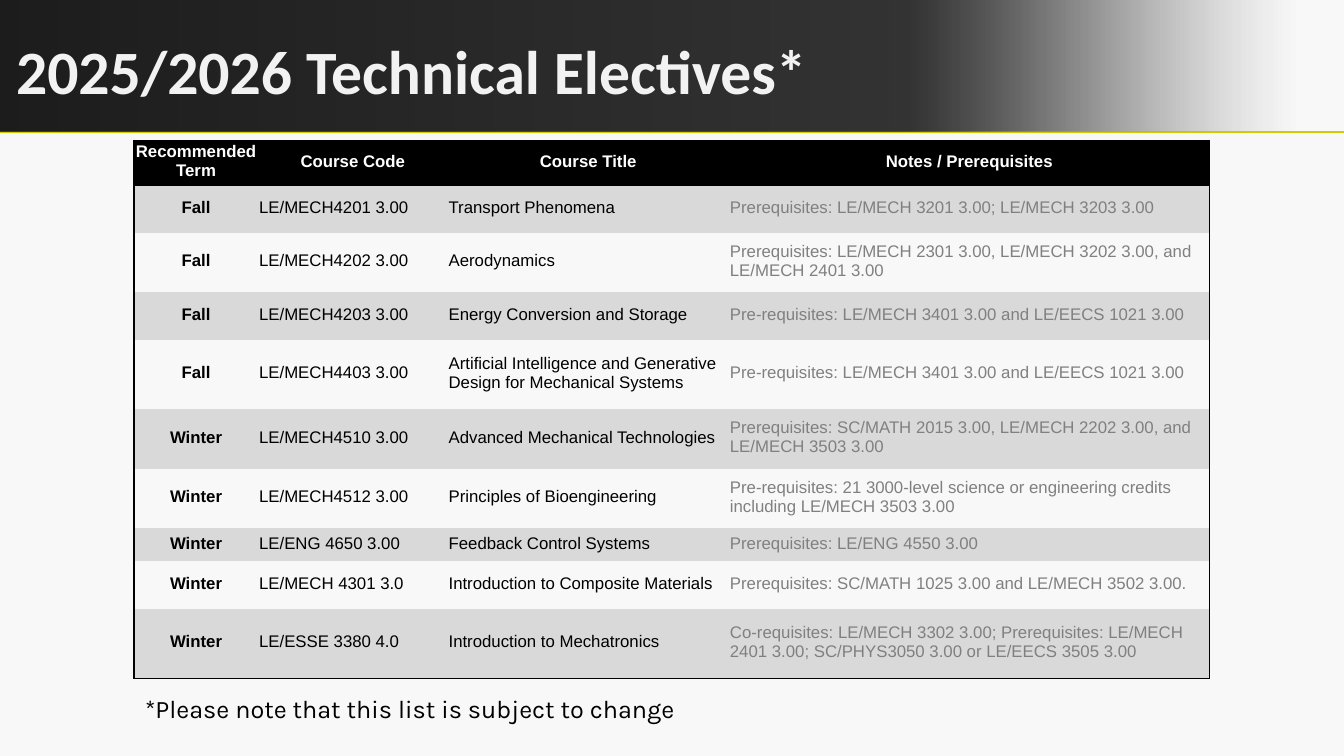
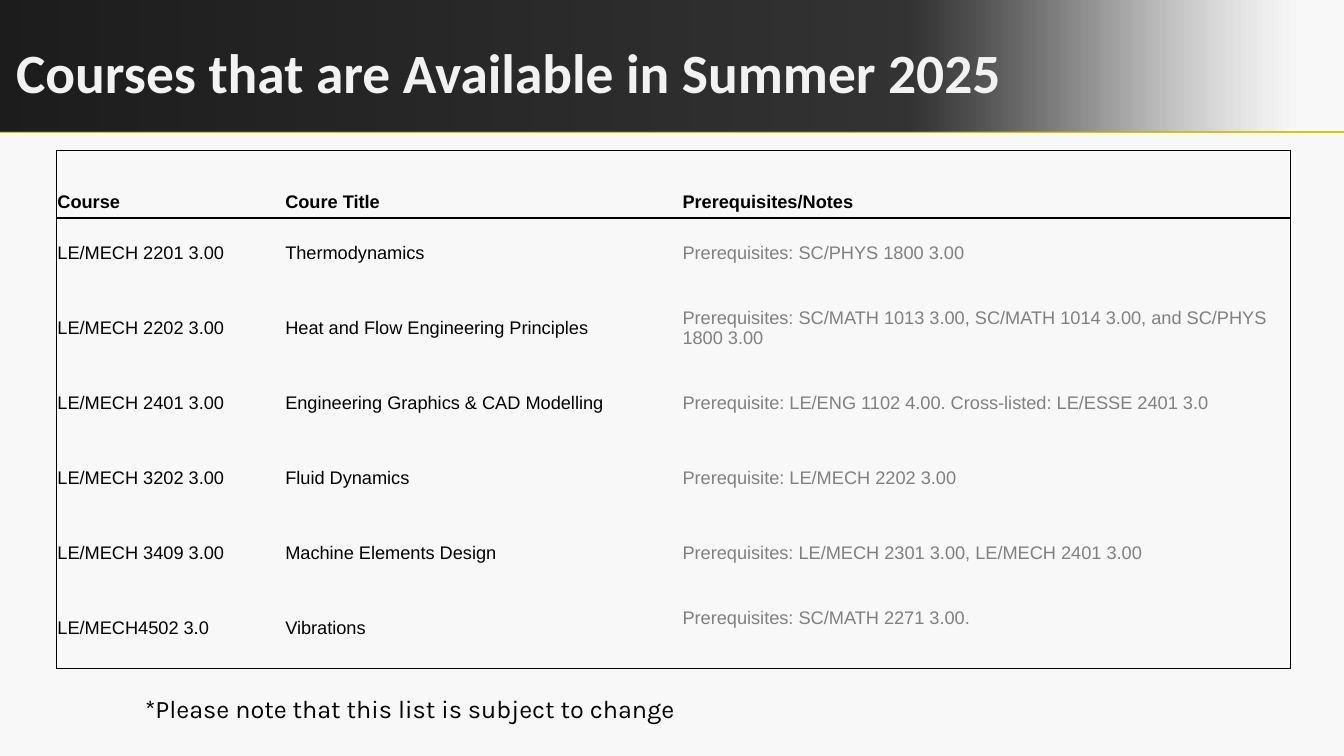
import lxml.etree
import pptx
import pptx.dml.color
import pptx.enum.shapes
import pptx.enum.text
import pptx.oxml.ns
import pptx.util

Inches = pptx.util.Inches
Pt = pptx.util.Pt
qn = pptx.oxml.ns.qn
Anchor = pptx.enum.text.MSO_ANCHOR
Align = pptx.enum.text.PP_ALIGN

COLORS = {
    "background": "F8F8F8",
    "band_dark": "1C1C1C",
    "band_mid": "333333",
    "band_fade": "C5C5C5",
    "accent": "D1CC00",
    "title": "F2F2F2",
    "black": "000000",
    "white": "FFFFFF",
    "stripe": "D9D9D9",
    "notes": "808080",
}
SLIDE_WIDTH, SLIDE_HEIGHT = 13.33, 7.5
BAND_WIDTH, BAND_HEIGHT = 12.86, 1.31
TITLE_BOX = (0.16, 0.13, 10.81, 1.25)
NOTE_BOX = (1.34, 6.86, 10.49, 0.37)
NOTE_TEXT = "*Please note that this list is subject to change"
PLAIN_TABLE_STYLE = "{2D5ABB26-0587-4C30-8999-92F81FD0307C}"
SUMMER_HEIGHT, SUMMER_HEADER_HEIGHT = 5.14, 0.67

ELECTIVES = [
    ("Recommended Term", "Course Code", "Course Title", "Notes / Prerequisites"),
    ("Fall", "LE/MECH4201 3.00", "Transport Phenomena",
     "Prerequisites: LE/MECH 3201 3.00; LE/MECH 3203 3.00"),
    ("Fall", "LE/MECH4202 3.00", "Aerodynamics",
     "Prerequisites: LE/MECH 2301 3.00, LE/MECH 3202 3.00, and LE/MECH 2401 3.00"),
    ("Fall", "LE/MECH4203 3.00", "Energy Conversion and Storage",
     "Pre-requisites: LE/MECH 3401 3.00 and LE/EECS 1021 3.00"),
    ("Fall", "LE/MECH4403 3.00",
     "Artificial Intelligence and Generative Design for Mechanical Systems",
     "Pre-requisites: LE/MECH 3401 3.00 and LE/EECS 1021 3.00"),
    ("Winter", "LE/MECH4510 3.00", "Advanced Mechanical Technologies",
     "Prerequisites: SC/MATH 2015 3.00, LE/MECH 2202 3.00, and LE/MECH 3503 3.00"),
    ("Winter", "LE/MECH4512 3.00", "Principles of Bioengineering",
     "Pre-requisites: 21 3000-level science or engineering credits including LE/MECH 3503 3.00"),
    ("Winter", "LE/ENG 4650 3.00", "Feedback Control Systems",
     "Prerequisites: LE/ENG 4550 3.00"),
    ("Winter", "LE/MECH 4301 3.0", "Introduction to Composite Materials",
     "Prerequisites: SC/MATH 1025 3.00 and LE/MECH 3502 3.00."),
    ("Winter", "LE/ESSE 3380 4.0", "Introduction to Mechatronics",
     "Co-requisites: LE/MECH 3302 3.00; Prerequisites: LE/MECH 2401 3.00; "
     "SC/PHYS3050 3.00 or LE/EECS 3505 3.00"),
]

SUMMER_COURSES = [
    ("Course", "Coure Title", "Prerequisites/Notes"),
    ("LE/MECH 2201 3.00", "Thermodynamics", "Prerequisites: SC/PHYS 1800 3.00"),
    ("LE/MECH 2202 3.00", "Heat and Flow Engineering Principles",
     "Prerequisites: SC/MATH 1013 3.00, SC/MATH 1014 3.00, and SC/PHYS 1800 3.00"),
    ("LE/MECH 2401 3.00", "Engineering Graphics & CAD Modelling",
     "Prerequisite: LE/ENG 1102 4.00. Cross-listed: LE/ESSE 2401 3.0"),
    ("LE/MECH 3202 3.00", "Fluid Dynamics", "Prerequisite: LE/MECH 2202 3.00"),
    ("LE/MECH 3409 3.00", "Machine Elements Design",
     "Prerequisites: LE/MECH 2301 3.00, LE/MECH 2401 3.00"),
    ("LE/MECH4502 3.0", "Vibrations", "Prerequisites: SC/MATH 2271 3.00."),
]


def rgb(name):
    return pptx.dml.color.RGBColor.from_string(COLORS[name])


def inches(box):
    return [Inches(length) for length in box]


def add_node(parent, tag, **attributes):
    return lxml.etree.SubElement(parent, qn(tag), attributes)


def style_paragraph(paragraph, font_name, size, color, bold=False):
    for run in paragraph.runs:
        run.font.name = font_name
        run.font.size = Pt(size)
        run.font.bold = bold
        run.font.color.rgb = rgb(color)


def fade_fill(shape):
    shape.fill.gradient()
    shape.fill.gradient_angle = 0
    stops = shape.element.spPr.find(qn("a:gradFill")).find(qn("a:gsLst"))
    for stop in list(stops):
        stops.remove(stop)
    for percent, color, opacity in ((0, "band_dark", 100), (70, "band_mid", 100), (100, "band_fade", 0)):
        stop = add_node(stops, "a:gs", pos=str(percent * 1000))
        stop_color = add_node(stop, "a:srgbClr", val=COLORS[color])
        add_node(stop_color, "a:alpha", val=str(opacity * 1000))


def add_band(slide):
    band = slide.shapes.add_shape(
        pptx.enum.shapes.MSO_SHAPE.RECTANGLE, *inches((0, 0, BAND_WIDTH, BAND_HEIGHT)))
    band.shadow.inherit = False
    band.line.fill.background()
    fade_fill(band)
    return band


def add_rule(slide):
    rule = slide.shapes.add_connector(
        pptx.enum.shapes.MSO_CONNECTOR.STRAIGHT,
        *inches((0, BAND_HEIGHT, SLIDE_WIDTH, BAND_HEIGHT)))
    rule.line.color.rgb = rgb("accent")
    rule.line.width = Pt(2)
    add_node(rule.element.spPr, "a:effectLst")
    return rule


def build_layout(presentation):
    layout = presentation.slide_layouts.get_by_name("Title Only")
    background = presentation.slide_master.background.fill
    background.solid()
    background.fore_color.rgb = rgb("background")
    return layout


def move_to_layout(layout, shapes):
    for position, shape in enumerate(shapes, start=2):
        layout.shapes.element.insert(position, shape.element)


def set_title(slide, text, size):
    title = slide.shapes.title
    title.left, title.top, title.width, title.height = inches(TITLE_BOX)
    frame = title.text_frame
    frame.text = text
    frame.auto_size = pptx.enum.text.MSO_AUTO_SIZE.NONE
    frame.vertical_anchor = Anchor.MIDDLE
    frame.margin_left = frame.margin_right = frame.margin_top = frame.margin_bottom = 0
    paragraph = frame.paragraphs[0]
    paragraph.alignment = Align.LEFT
    paragraph.line_spacing = 0.85
    style_paragraph(paragraph, "Calibri", size, "title", True)


def add_note(slide):
    frame = slide.shapes.add_textbox(*inches(NOTE_BOX)).text_frame
    frame.word_wrap = True
    frame.auto_size = pptx.enum.text.MSO_AUTO_SIZE.SHAPE_TO_FIT_TEXT
    frame.text = NOTE_TEXT
    frame.paragraphs[0].line_spacing = 0.9
    style_paragraph(frame.paragraphs[0], "Karla", 18, "black")


def set_borders(cell, widths):
    properties = cell._tc.get_or_add_tcPr()
    for side in "LRTB":
        width = widths.get(side)
        line = add_node(properties, "a:ln" + side, w=str(Pt(width or 0)))
        if width:
            fill = add_node(line, "a:solidFill")
            add_node(fill, "a:srgbClr", val=COLORS["black"])
        else:
            add_node(line, "a:noFill")


def outline_widths(row, column, last_row, last_column, header_line):
    widths = {}
    if column == 0:
        widths["L"] = 1
    if column == last_column:
        widths["R"] = 1
    if row <= 1:
        widths["T"] = 1 if row == 0 else header_line
    if row == 0:
        widths["B"] = header_line
    if row == last_row:
        widths["B"] = 1
    return widths


def fill_cell(cell, text, size, color, bold, fill, bottom_margin):
    cell.text_frame.text = text
    cell.vertical_anchor = Anchor.MIDDLE
    cell.margin_left = cell.margin_right = cell.margin_top = Inches(0.01)
    cell.margin_bottom = Inches(bottom_margin)
    if fill:
        cell.fill.solid()
        cell.fill.fore_color.rgb = rgb(fill)
    else:
        cell.fill.background()
    style_paragraph(cell.text_frame.paragraphs[0], "Arial", size, color, bold)


def add_course_table(slide, left, top, column_widths, row_heights, courses,
                     size, header_line, bottom_margin, striped):
    last_row, last_column = len(courses) - 1, len(column_widths) - 1
    frame = slide.shapes.add_table(
        len(courses), len(column_widths),
        *inches((left, top, sum(column_widths), sum(row_heights))))
    table = frame.table
    table.first_row = table.horz_banding = False
    table._tbl.tblPr.find(qn("a:tableStyleId")).text = PLAIN_TABLE_STYLE
    for column, width in zip(table.columns, column_widths):
        column.width = Inches(width)
    for row, height in zip(table.rows, row_heights):
        row.height = Inches(height)
    for row, course in enumerate(courses):
        for column, text in enumerate(course):
            cell = table.cell(row, column)
            header = row == 0
            term = striped and column == 0
            color = "notes" if column == last_column else "black"
            fill = None
            if header:
                color = "white" if striped else "black"
                fill = "black" if striped else None
            elif striped and row % 2:
                fill = "stripe"
            set_borders(cell, outline_widths(row, column, last_row, last_column, header_line))
            fill_cell(cell, text, size, color, header or term, fill, bottom_margin)
            if striped and (header or term):
                cell.text_frame.paragraphs[0].alignment = Align.CENTER
            if header and not striped:
                cell.vertical_anchor = Anchor.BOTTOM
    return table


def add_course_slide(presentation, layout, title, title_size):
    slide = presentation.slides.add_slide(layout)
    set_title(slide, title, title_size)
    add_note(slide)
    return slide


def main():
    presentation = pptx.Presentation()
    presentation.slide_width = Inches(SLIDE_WIDTH)
    presentation.slide_height = Inches(SLIDE_HEIGHT)
    layout = build_layout(presentation)

    electives = add_course_slide(presentation, layout, "2025/2026 Technical Electives*", 44)
    move_to_layout(layout, [add_band(electives), add_rule(electives), add_band(electives)])
    add_course_table(
        electives, 1.33, 1.39, [1.23, 1.88, 2.79, 4.77],
        [0.43, 0.47, 0.59, 0.47, 0.69, 0.59, 0.59, 0.33, 0.47, 0.69],
        ELECTIVES, size=12, header_line=0.5, bottom_margin=0.04, striped=True)

    summer = add_course_slide(presentation, layout, "Courses that are Available in Summer 2025", 39.6)
    course_count = len(SUMMER_COURSES) - 1
    course_height = (SUMMER_HEIGHT - SUMMER_HEADER_HEIGHT) / course_count
    summer_table = add_course_table(
        summer, 0.56, 1.49, [2.26, 3.94, 6.04],
        [SUMMER_HEADER_HEIGHT] + [course_height] * course_count,
        SUMMER_COURSES, size=13, header_line=1.5, bottom_margin=0.05, striped=False)
    summer_table.cell(course_count, 2).margin_bottom = Inches(0.25)

    presentation.save("out.pptx")


if __name__ == "__main__":
    main()
